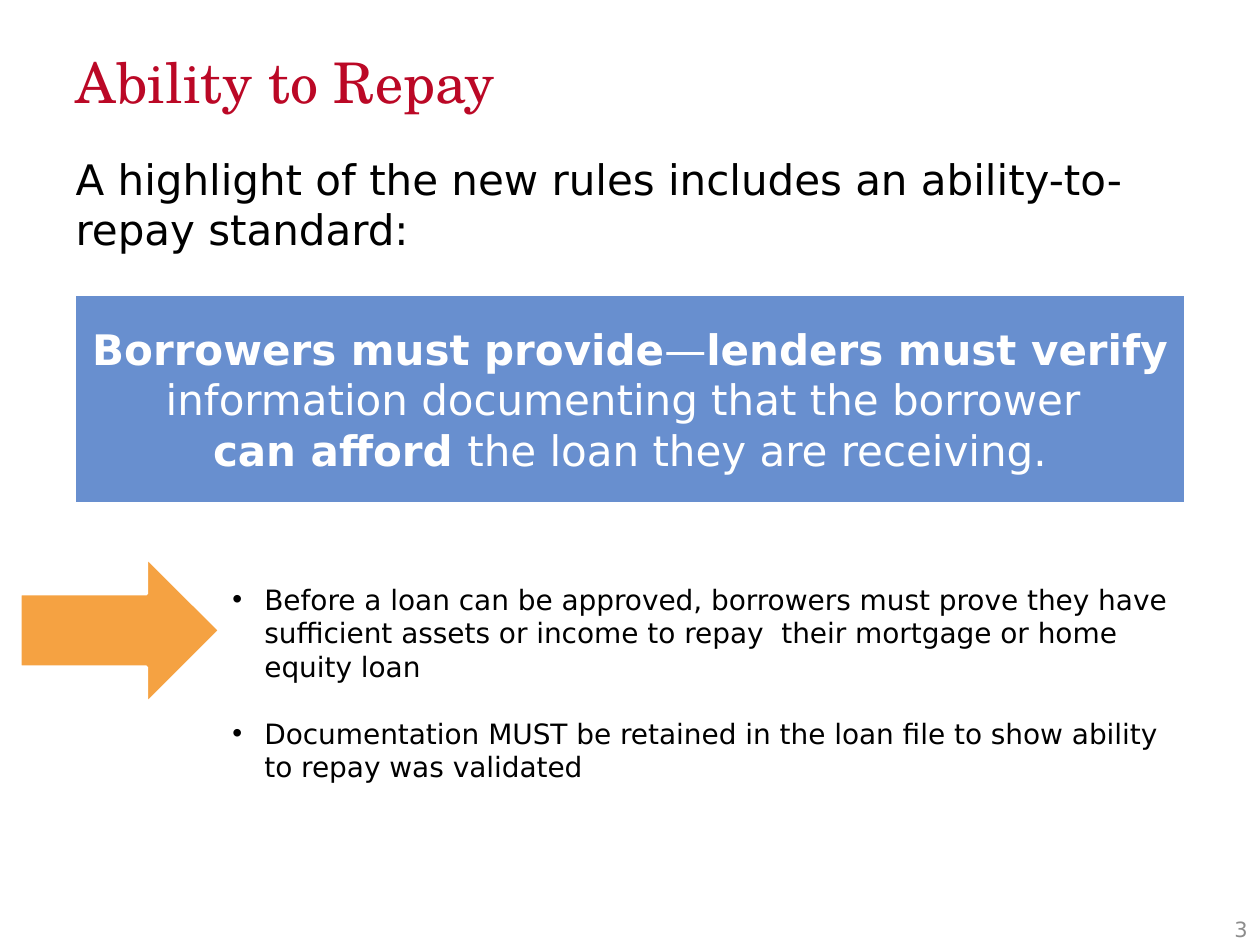
from lxml import etree
from pptx import Presentation
from pptx import util as u
from pptx.dml.color import RGBColor
from pptx.enum import shapes, text
from pptx.oxml.ns import qn

PX = u.Inches(1) / 126
SANS, SERIF = "DejaVu Sans", "TeX Gyre Schola"
COLORS = {"title": "BB0826", "body": "000000", "number": "8C8C8C",
          "standard": "688FCF", "arrow": "F5A242", "white": "FFFFFF"}

INTRO = ["A highlight of the new rules includes an ability-to-", "repay standard:"]
# Each line is a list of (wording, bold) runs
STANDARD = [
    [("Borrowers must provide", True), ("—", False), ("lenders must verify", True)],
    [("information documenting that the borrower ", False)],
    [("can afford ", True), ("the loan they are receiving.", False)],
]
REQUIREMENTS = [
    "Before a loan can be approved, borrowers must prove they have sufficient "
    "assets or income to repay  their mortgage or home equity loan",
    "Documentation MUST be retained in the loan file to show ability "
    "to repay was validated",
]


def px(*lengths):
    return [u.Emu(round(length * PX)) for length in lengths]


def color(name):
    return RGBColor.from_string(COLORS[name])


def apply(target, formats):
    for name, value in formats.items():
        setattr(target, name, value)


def place(shape, box):
    apply(shape, dict(zip(("left", "top", "width", "height"), px(*box))))


def write(frame, lines, size, ink, font=SANS, anchor=text.MSO_ANCHOR.TOP,
          **paragraph_format):
    """Fill a frame with lines, each a string or a list of (wording, bold) runs."""
    apply(frame, {"word_wrap": True, "auto_size": text.MSO_AUTO_SIZE.NONE,
                  "vertical_anchor": anchor})
    formats = {"alignment": text.PP_ALIGN.LEFT, "space_before": u.Pt(0),
               **paragraph_format}
    for index, line in enumerate(lines):
        paragraph = frame.add_paragraph() if index else frame.paragraphs[0]
        apply(paragraph, formats)
        for wording, bold in [(line, False)] if isinstance(line, str) else line:
            run = paragraph.add_run()
            run.text = wording
            apply(run.font, {"name": font, "size": u.Pt(size), "bold": bold})
            run.font.color.rgb = color(ink)


def set_bullet(paragraph, mark=None, indent=0):
    """Hang the paragraph by indent px behind a mark, or flush with no mark."""
    props = paragraph._p.get_or_add_pPr()
    hang, = px(indent)
    props.set("marL", str(hang))
    props.set("indent", str(-hang))
    if mark:
        etree.SubElement(props, qn("a:buFont")).set("typeface", "Arial")
        etree.SubElement(props, qn("a:buChar")).set("char", mark)
    else:
        etree.SubElement(props, qn("a:buNone"))


def add_block(slide, preset, box, fill):
    block = slide.shapes.add_shape(preset, *px(*box))
    block.shadow.inherit = False
    block.fill.solid()
    block.fill.fore_color.rgb = color(fill)
    block.line.color.rgb = color("white")
    block.line.width = u.Pt(2)
    return block


def add_text(slide, box, lines, size, ink, **formats):
    frame = slide.shapes.add_textbox(*px(*box)).text_frame
    write(frame, lines, size, ink, **formats)
    return frame


def main():
    deck = Presentation()
    deck.slide_width, deck.slide_height = px(1260, 945)
    slide = deck.slides.add_slide(deck.slide_layouts[1])
    title, intro = slide.placeholders

    place(title, (63, 38, 1134, 158))
    write(title.text_frame, ["Ability to Repay"], 32, "title", font=SERIF,
          line_spacing=1.05)

    place(intro, (63, 147, 1134, 431))
    write(intro.text_frame, INTRO, 24, "body")
    for paragraph in intro.text_frame.paragraphs:
        set_bullet(paragraph)

    add_text(slide, (966, 914, 294, 31), ["3"], 12, "number",
             anchor=text.MSO_ANCHOR.MIDDLE, alignment=text.PP_ALIGN.RIGHT)

    standard = add_block(slide, shapes.MSO_SHAPE.RECTANGLE,
                         (74, 294, 1112, 210), "standard")
    write(standard.text_frame, STANDARD, 24, "white",
          anchor=text.MSO_ANCHOR.MIDDLE, alignment=text.PP_ALIGN.CENTER)

    requirements = add_text(slide, (220, 576, 980, 276), REQUIREMENTS, 16, "body",
                            space_after=u.Pt(19))
    for paragraph in requirements.paragraphs:
        set_bullet(paragraph, "•", 32)

    add_block(slide, shapes.MSO_SHAPE.RIGHT_ARROW, (20, 557, 200, 147), "arrow")
    deck.save("out.pptx")


if __name__ == "__main__":
    main()
